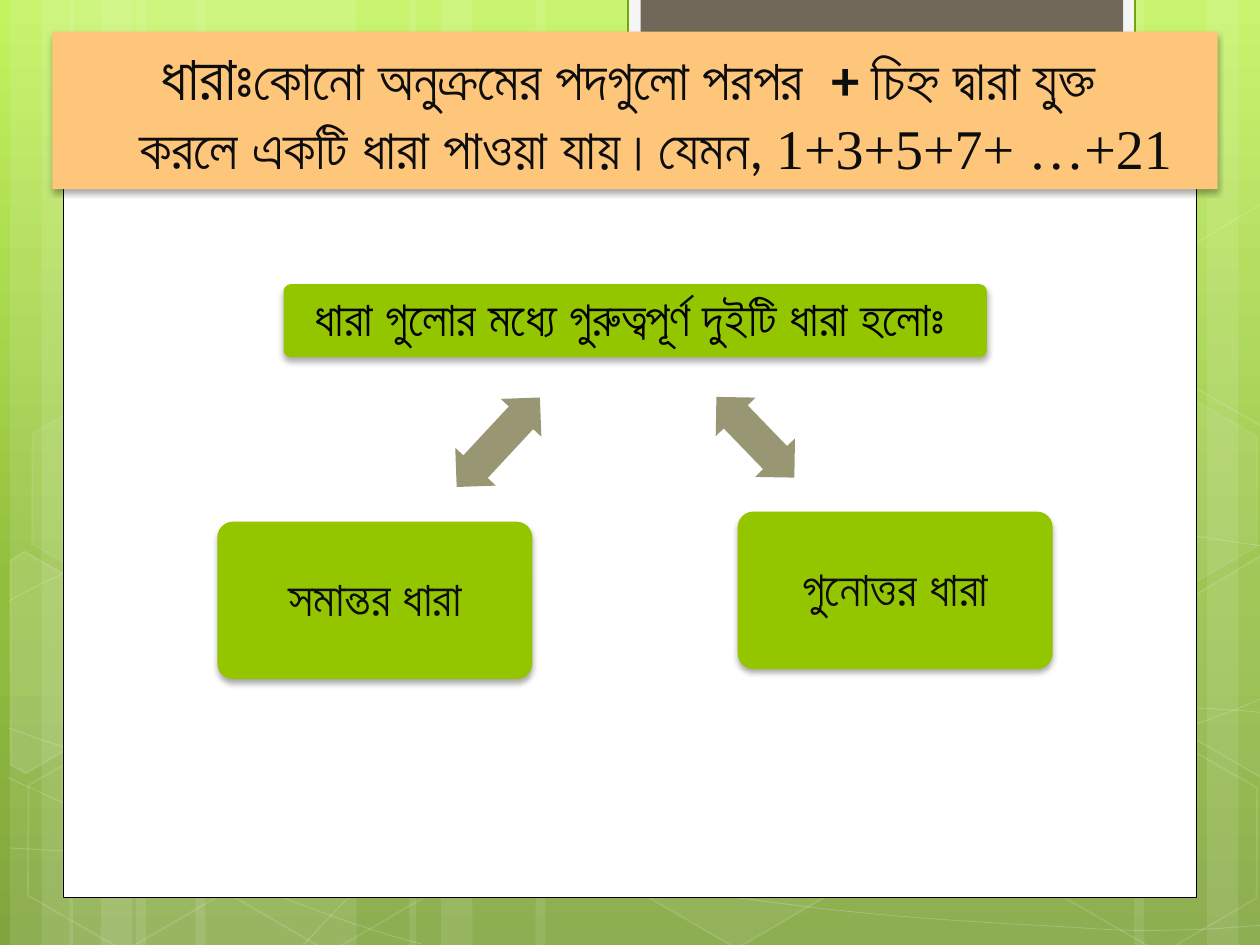
from copy import deepcopy

from lxml import etree
from pptx import Presentation
from pptx import util as u
from pptx.dml.color import RGBColor
from pptx.enum import shapes, text
from pptx.oxml.ns import qn

COLS, ROWS = 100, 75
COLORS = {
    "sky": "C3F35F", "leaf": "93BF3F", "moss": "81A53E",
    "white": "FFFFFF", "black": "000000", "ink": "0D0D0D",
    "tab": "F5F5F5", "tab_edge": "74A510", "tab_core": "71685A",
    "banner": "FEC67A", "node": "94C600", "arrow": "999773",
}
PRESET = shapes.MSO_SHAPE


def rgb(name):
    return RGBColor.from_string(COLORS[name])


def bend(shape):
    """Turn each three line segments of a freeform into one cubic curve."""
    outline = next(shape.element.iter(qn("a:path")))
    segments = outline.findall(qn("a:lnTo"))
    for i in range(0, len(segments), 3):
        curve = etree.SubElement(outline, qn("a:cubicBezTo"))
        for segment in segments[i:i + 3]:
            curve.append(segment[0])
            outline.remove(segment)


def add_run(paragraph, words, size=32, font="Calibri", color="ink", bold=False):
    run = paragraph.add_run()
    run.text = words
    run.font.size, run.font.name, run.font.bold = u.Pt(size), font, bold
    run.font.color.rgb = rgb(color)


class Deck:
    def __init__(self):
        self.prs = Presentation()
        self.prs.slide_width, self.prs.slide_height = u.Inches(10), u.Inches(7.5)
        self.col = self.prs.slide_width / COLS
        self.row = self.prs.slide_height / ROWS
        self.slide = self.prs.slides.add_slide(self.prs.slide_layouts[5])

    def place(self, x, y):
        return round(x * self.col), round(y * self.row)

    def gradient(self, stops):
        fill = self.slide.background.fill
        fill.gradient()
        fill.gradient_angle = 270
        stop_list = next(self.slide.element.iter(qn("a:gsLst")))
        while len(stop_list) < len(stops):
            stop_list.append(deepcopy(stop_list[-1]))
        for stop, (position, color) in zip(fill.gradient_stops, stops):
            stop.color.rgb = rgb(color)
            stop.position = position

    def fade(self, parent, alpha):
        if alpha < 100:
            tint = next(parent.iter(qn("a:srgbClr")))
            etree.SubElement(tint, qn("a:alpha")).set("val", str(alpha * 1000))

    def paint(self, shape, fill=None, alpha=100, line=None, width=1, line_alpha=100):
        if fill:
            shape.fill.solid()
            shape.fill.fore_color.rgb = rgb(fill)
            self.fade(shape.element.spPr.find(qn("a:solidFill")), alpha)
        else:
            shape.fill.background()
        if line:
            shape.line.color.rgb = rgb(line)
            shape.line.width = u.Pt(width)
            self.fade(shape.element.spPr.find(qn("a:ln")), line_alpha)
        else:
            shape.line.fill.background()

    def drop_shadow(self, shape):
        shape.shadow.inherit = False
        effects = shape.element.spPr.find(qn("a:effectLst"))
        shadow = etree.SubElement(effects, qn("a:outerShdw"), blurRad=str(u.Pt(3.5)),
                                  dist=str(u.Pt(2.2)), dir="5400000", rotWithShape="0")
        tint = etree.SubElement(shadow, qn("a:srgbClr"), val=COLORS["black"])
        etree.SubElement(tint, qn("a:alpha"), val="32000")

    def preset(self, kind, x, y, w, h, adjust=(), turn=0, **look):
        shape = self.slide.shapes.add_shape(kind, *self.place(x, y), *self.place(w, h))
        shape.shadow.inherit = False
        shape.rotation = turn
        for i, value in enumerate(adjust):
            shape.adjustments[i] = value
        self.paint(shape, **look)
        return shape

    def outline(self, points, close=False, turn=0, **look):
        spots = [self.place(*point) for point in points]
        builder = self.slide.shapes.build_freeform(*spots[0])
        builder.add_line_segments(spots[1:], close=close)
        shape = builder.convert_to_shape()
        shape.shadow.inherit = False
        shape.rotation = turn
        self.paint(shape, line="white", **look)
        return shape

    def node(self, words, x, y, w, h, color):
        box = self.preset(PRESET.ROUNDED_RECTANGLE, x, y, w, h, adjust=(0.1,), fill="node")
        self.drop_shadow(box)
        frame = box.text_frame
        frame.word_wrap = True
        frame.vertical_anchor = text.MSO_ANCHOR.MIDDLE
        frame.margin_left = frame.margin_right = u.Inches(0.14)
        frame.margin_top = frame.margin_bottom = u.Inches(0.14)
        paragraph = frame.paragraphs[0]
        paragraph.alignment = text.PP_ALIGN.CENTER
        paragraph.line_spacing = 0.9
        add_run(paragraph, words, size=28, color=color)

    def banner(self, x, y, w, h, lines, indents):
        """Format the title placeholder and bring it in front of the backdrop."""
        title = self.slide.shapes.title
        title.element.getparent().append(title.element)
        title.left, title.top = self.place(x, y)
        title.width, title.height = self.place(w, h)
        self.paint(title, fill="banner")
        self.drop_shadow(title)
        frame = title.text_frame
        frame.word_wrap = True
        frame.auto_size = text.MSO_AUTO_SIZE.SHAPE_TO_FIT_TEXT
        frame.vertical_anchor = text.MSO_ANCHOR.TOP
        for i, (runs, indent) in enumerate(zip(lines, indents)):
            paragraph = frame.add_paragraph() if i else frame.paragraphs[0]
            paragraph.alignment = text.PP_ALIGN.CENTER
            paragraph._p.get_or_add_pPr().set("marL", str(u.Inches(indent)))
            for words, style in runs:
                add_run(paragraph, words, **style)


STRIPES = [(x + shift, w) for shift in (0, 4.7)
           for x, w in ((10.8, 17.5), (0.8, 5), (3.3, 8.3))]
STRIPES += [(73.3, 17.5), (95.8, 5), (90, 8.3), (42.5, 30.8), (32.5, 5), (35, 8.3)]

# a start, then two handles and an end for each curve
WAVES = [
    [(0.7, 67.3), (6.1, 67.6), (11.5, 67.9), (19, 67.8), (26.5, 67.7), (35.8, 67.5),
     (45.8, 66.5), (55.8, 65.5), (70, 63.6), (79.2, 61.7), (88.3, 59.8), (97.7, 56.8),
     (100.7, 55.1)],
    [(0.7, 47.7), (3.6, 46.1), (6.5, 44.6), (12.1, 43.1), (17.8, 41.6), (25.9, 39.4),
     (34.7, 38.7), (43.6, 38), (54.4, 37.9), (65.4, 38.7), (76.4, 39.5), (94.7, 42.6),
     (100.7, 43.4)],
    [(0.6, 61.7), (12.7, 67.2), (24.7, 72.7), (33.4, 74.9)],
    [(0.7, 57.8), (3.8, 58.9), (7, 60), (12.8, 61.6), (18.6, 63.1), (27.3, 65.6),
     (35.7, 67.3), (44, 69), (54.5, 70.8), (62.8, 71.8), (71.1, 72.9), (80, 73.3),
     (85.3, 73.6), (90.5, 74), (91.9, 73.8), (94.5, 73.8), (97.1, 73.7), (98.9, 73.5),
     (100.7, 73.4)],
    [(24.2, 74.9), (26, 72.9), (27.8, 70.9), (30.2, 69.1), (32.6, 67.3), (36, 65.3),
     (38.8, 63.9), (41.6, 62.5), (43.3, 61.9), (47, 60.9), (50.6, 59.9), (57.3, 58.5),
     (60.8, 57.8), (64.4, 57.1), (64.9, 57.1), (68, 56.9), (71.1, 56.6), (76, 56.3),
     (79.4, 56.2), (82.9, 56.1), (88.6, 56.2), (95.3, 56.2), (97.1, 56.3), (98.8, 56.4),
     (100.6, 56.6)],
]

# left, top, fill opacity (0 for none), line opacity
HEXAGONS = [(33.4, 3.6, 4, 8), (49.7, 58.9, 6, 12), (1.1, 59.1, 0, 12), (1.4, 31.2, 7, 8),
            (17.4, 59.2, 0, 12), (75.3, 45.3, 10, 12), (83.4, 59.3, 0, 12),
            (83.4, 31.4, 7, 8)]

# corners around the centre, before the turn
LEFT_CUT = [(-6.9, -6.4), (-6.3, -7.6), (2.6, -7.6), (6.9, 0.1), (2.6, 7.6), (1.2, 7.6)]
RIGHT_CUT = [(-6.8, 0), (-2.6, -7.6), (-1.6, -7.6), (6.8, 6.9), (6.3, 7.6), (-2.5, 7.6)]
# corners, centre, fill
CUT_HEXAGONS = [(LEFT_CUT, 3.6, 53.5, {"fill": "white", "alpha": 10}),
                (RIGHT_CUT, 98.5, 52, {"fill": "white", "alpha": 4}),
                (RIGHT_CUT, 98.5, 24.1, {})]


def draw_backdrop(deck):
    deck.gradient([(0, "sky"), (0.62, "leaf"), (1, "moss")])
    for x, w in STRIPES:
        deck.preset(PRESET.RECTANGLE, x, 0, w, ROWS, fill="white", alpha=10)
    for wave in WAVES:
        bend(deck.outline(wave, width=0.5, line_alpha=20))
    for x, y, alpha, line_alpha in HEXAGONS:
        deck.preset(PRESET.HEXAGON, x, y, 17.5, 15.2, adjust=(0.285,), turn=30,
                    fill="white" if alpha else None, alpha=alpha,
                    line="white", line_alpha=line_alpha)
    for corners, x, y, fill in CUT_HEXAGONS:
        deck.outline([(x + dx, y + dy) for dx, dy in corners], close=True, turn=30,
                     line_alpha=12, **fill)
    deck.preset(PRESET.RECTANGLE, 5, 3.6, 90, 67.65, fill="white", line="black", width=0.5)
    deck.preset(PRESET.RECTANGLE, 49.85, -0.2, 40.2, 7.6, fill="tab", line="tab_edge",
                width=1.25)
    deck.preset(PRESET.RECTANGLE, 50.85, -0.2, 38.3, 6.8, fill="tab_core")


def main():
    deck = Deck()
    draw_backdrop(deck)
    definition = [("ধারাঃ", {"size": 36}), ("কোনো অনুক্রমের পদগুলো পরপর  ", {}),
                  ("+ ", {"bold": True}), ("চিহ্ন দ্বারা যুক্ত ", {})]
    example = [("করলে একটি ধারা পাওয়া যায়।যেমন, ", {}),
               ("1+3+5+7+ …+21", {"font": "Times New Roman"})]
    deck.banner(4.15, 2.5, 92.5, 12.5, [definition, example], indents=(0, 0.33))

    deck.node("ধারা গুলোর মধ্যে গুরুত্বপূর্ণ দুইটি ধারা হলোঃ ", 22.5, 22.55, 55.83, 5.8, "black")
    deck.node("গুনোত্তর ধারা", 58.55, 40.6, 25, 12.5, "ink")
    deck.node("সমান্তর ধারা", 17.25, 41.4, 25, 12.5, "ink")
    for x, y, w, turn in ((55.5, 32.5, 8.9, 46), (34.7, 32.9, 9.7, 312.9)):
        deck.preset(PRESET.LEFT_RIGHT_ARROW, x, y, w, 4.4, adjust=(0.6, 0.5), turn=turn,
                    fill="arrow")
    deck.prs.save("out.pptx")


if __name__ == "__main__":
    main()
